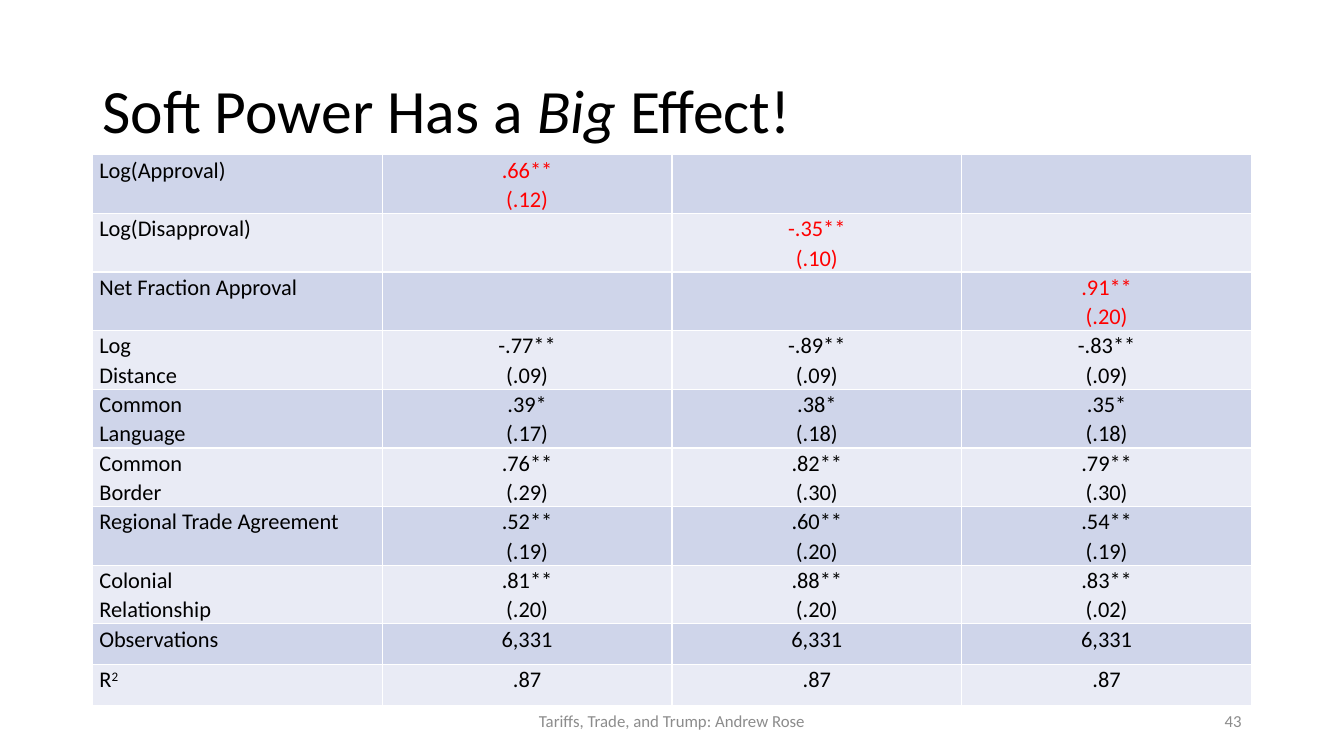
from pptx import Presentation
from pptx.dml.color import RGBColor
from pptx.enum.text import MSO_ANCHOR as Anchor, MSO_AUTO_SIZE as AutoSize, PP_ALIGN as Align
from pptx.util import Pt

FONT = "Calibri"
BLACK = RGBColor(0x00, 0x00, 0x00)
RED = RGBColor(0xFF, 0x00, 0x00)
GREY = RGBColor(0x8C, 0x8C, 0x8C)
BANDS = (RGBColor(0xCF, 0xD5, 0xEA), RGBColor(0xE9, 0xEB, 0xF5))

SOFT_POWER_ROWS = 3
ESTIMATES = [
    ("Log(Approval)", ".66**\n(.12)", "", ""),
    ("Log(Disapproval)", "", "-.35**\n(.10)", ""),
    ("Net Fraction Approval", "", "", ".91**\n(.20)"),
    ("Log\nDistance", "-.77**\n(.09)", "-.89**\n(.09)", "-.83**\n(.09)"),
    ("Common\nLanguage", ".39*\n(.17)", ".38*\n(.18)", ".35*\n(.18)"),
    ("Common\nBorder", ".76**\n(.29)", ".82**\n(.30)", ".79**\n(.30)"),
    ("Regional Trade Agreement", ".52**\n(.19)", ".60**\n(.20)", ".54**\n(.19)"),
    ("Colonial\nRelationship", ".81**\n(.20)", ".88**\n(.20)", ".83**\n(.02)"),
    ("Observations", "6,331", "6,331", "6,331"),
    ("R", ".87", ".87", ".87"),
]


def format_paragraph(paragraph, size, color, align, spacing=1.0):
    paragraph.alignment = align
    paragraph.line_spacing = spacing
    font = paragraph.font
    font.name, font.size, font.color.rgb = FONT, Pt(size), color


def add_title(slide, left, top, width, height):
    title = slide.shapes.title
    title.left, title.top, title.width, title.height = map(Pt, (left, top, width, height))
    frame = title.text_frame
    frame.auto_size = AutoSize.NONE
    frame.vertical_anchor = Anchor.MIDDLE
    heading = frame.paragraphs[0]
    for words, italic in (("Soft Power Has a ", False), ("Big", True), (" Effect!", False)):
        run = heading.add_run()
        run.text = words
        run.font.italic = italic
    format_paragraph(heading, 44, BLACK, Align.LEFT, 0.9)


def fill_cell(cell, content, band, color, align):
    cell.fill.solid()
    cell.fill.fore_color.rgb = band
    if not content:
        return
    cell.margin_left = cell.margin_right = Pt(5)
    cell.margin_top = cell.margin_bottom = 0
    cell.text = content
    for paragraph in cell.text_frame.paragraphs:
        format_paragraph(paragraph, 16, color, align, 1.07)


def add_estimates(slide, left, top, width, height):
    """Regression table; rows with two lines grow beyond their equal share."""
    row_count, column_count = len(ESTIMATES), len(ESTIMATES[0])
    table = slide.shapes.add_table(
        row_count, column_count, Pt(left), Pt(top), Pt(width), Pt(height)).table
    table.first_row = False
    for r, estimates in enumerate(ESTIMATES):
        for c, content in enumerate(estimates):
            color = RED if c and r < SOFT_POWER_ROWS else BLACK
            align = Align.CENTER if c else Align.LEFT
            fill_cell(table.cell(r, c), content, BANDS[r % 2], color, align)
    exponent = table.cell(row_count - 1, 0).text_frame.paragraphs[0].add_run()
    exponent.text = "2"
    exponent.font._element.set("baseline", "30000")


def add_footer_text(slide, words, align, left, top, width, height):
    frame = slide.shapes.add_textbox(*map(Pt, (left, top, width, height))).text_frame
    frame.word_wrap = True
    frame.vertical_anchor = Anchor.MIDDLE
    frame.text = words
    format_paragraph(frame.paragraphs[0], 12, GREY, align)


def main():
    deck = Presentation()
    deck.slide_width, deck.slide_height = Pt(960), Pt(540)
    slide = deck.slides.add_slide(deck.slide_layouts[5])
    add_title(slide, 66, 28.75, 828, 104.4)
    add_estimates(slide, 66, 110.6, 828, 292)
    add_footer_text(slide, "Tariffs, Trade, and Trump: Andrew Rose", Align.CENTER,
                    318, 500.5, 324, 28.75)
    add_footer_text(slide, "43", Align.RIGHT, 678, 500.5, 216, 28.75)
    deck.save("out.pptx")


if __name__ == "__main__":
    main()
